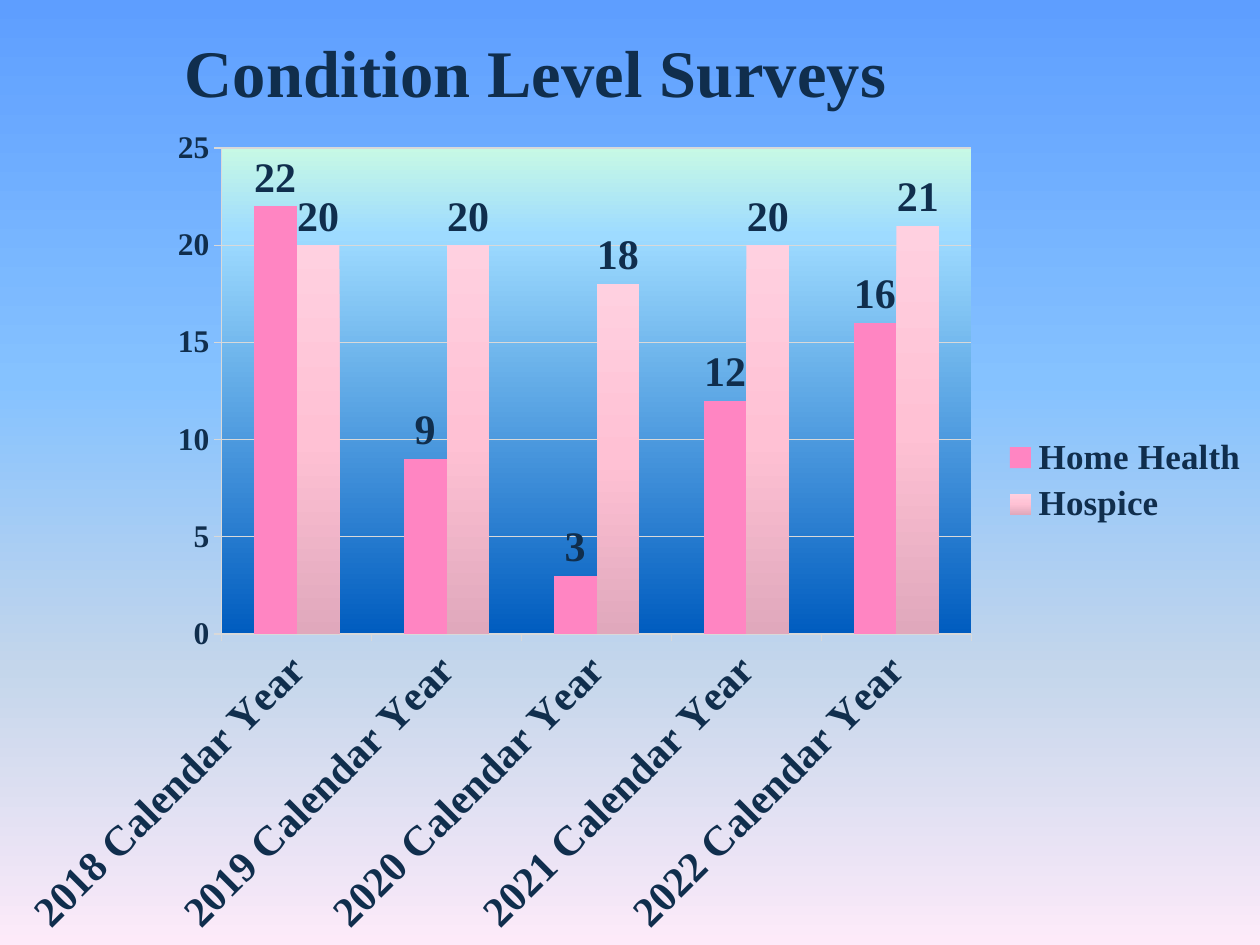
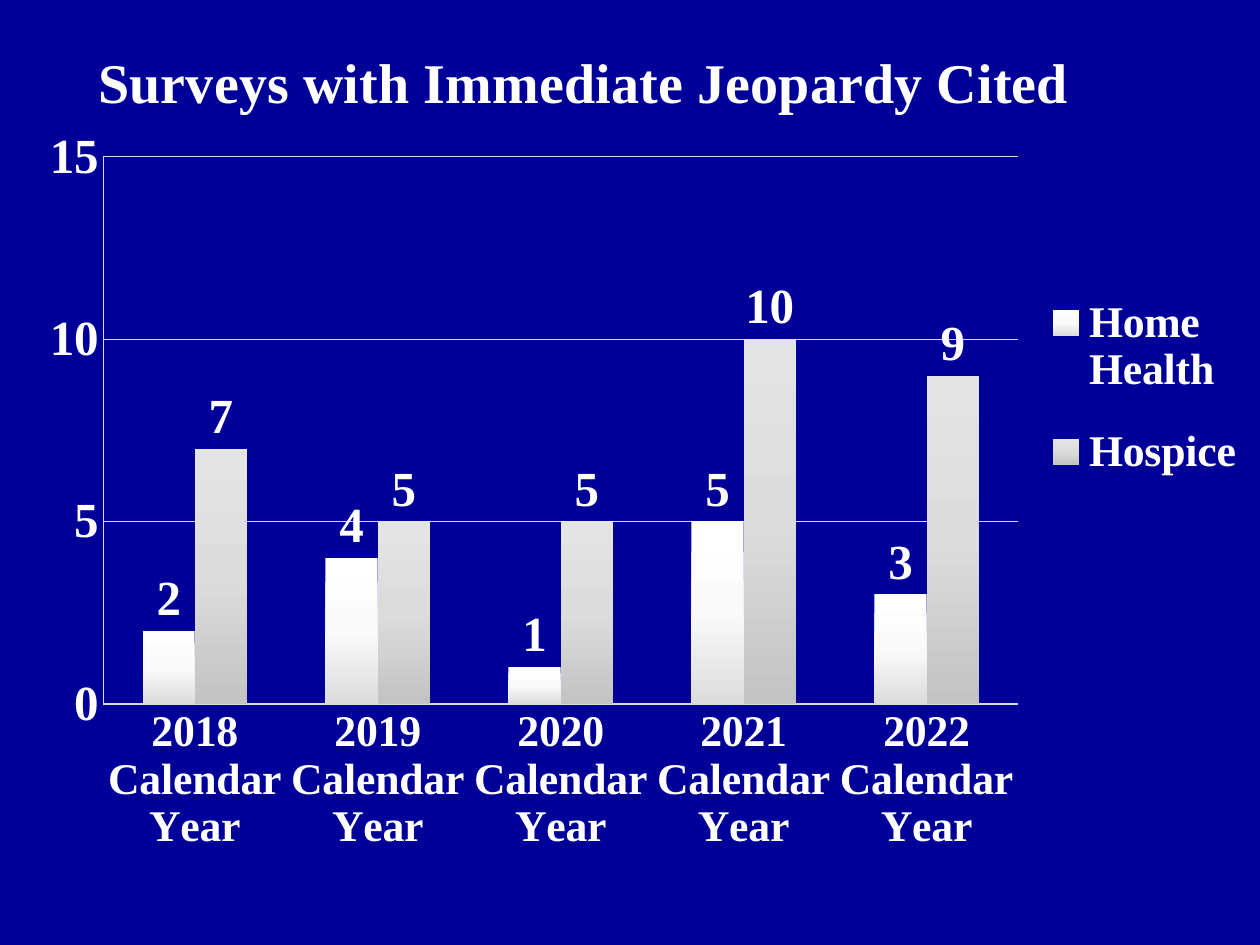
from lxml import etree
from pptx import Presentation
from pptx import util as u
from pptx.chart.data import CategoryChartData
from pptx.dml.color import RGBColor
from pptx.enum import chart as chart_enum
from pptx.oxml import parse_xml
from pptx.oxml.ns import nsdecls, qn

COLORS = {
    "background": "000099",
    "navy": "102E4D",
    "white": "FFFFFF",
    "grid": "D9D9D9",
    "pink": "FF85C2",
}
SKY = [(0, "5E9EFF"), (40, "85C2FF"), (70, "C4D6EB"), (100, "FFEBFA")]
SEA = [(0, "C7F9E5"), (18, "9EDBFF"), (100, "005CBF")]
PALE_PINK = [(0, "FFD0E0"), (50, "FFC1D4"), (100, "E0A8BC")]
WHITE_FADE = [(0, "FFFFFF"), (50, "FAFAFA"), (100, "DCDCDC")]
GRAY_FADE = [(0, "E4E4E4"), (50, "DCDCDC"), (100, "C3C3C3")]
FONT = "Times New Roman"
YEARS = [f"{year} Calendar Year" for year in range(2018, 2023)]


def rgb(name):
    return RGBColor.from_string(COLORS[name])


def gradient(stops):
    """Return a top-to-bottom gradient fill element."""
    marks = "".join(
        f'<a:gs pos="{percent * 1000}"><a:srgbClr val="{color}"/></a:gs>'
        for percent, color in stops)
    return parse_xml(
        f'<a:gradFill {nsdecls("a")} rotWithShape="1"><a:gsLst>{marks}</a:gsLst>'
        '<a:lin ang="5400000" scaled="0"/></a:gradFill>')


def area_properties(stops):
    """Return chart shape properties without a line, filled if stops are given."""
    properties = parse_xml(f'<c:spPr {nsdecls("c", "a")}><a:ln><a:noFill/></a:ln></c:spPr>')
    properties.insert(0, gradient(stops) if stops else
                      parse_xml(f'<a:noFill {nsdecls("a")}/>'))
    return properties


def set_layout(element, index, fractions, inner=False):
    """Place a chart part by fractions (x, y[, w, h]) of the chart's size."""
    for old in element.findall(qn("c:layout")):
        element.remove(old)
    layout = parse_xml(f'<c:layout {nsdecls("c")}><c:manualLayout/></c:layout>')
    settings = [("layoutTarget", "inner")] if inner else []
    settings += [("xMode", "edge"), ("yMode", "edge")]
    settings += list(zip("xywh", fractions))
    for tag, value in settings:
        etree.SubElement(layout[0], qn(f"c:{tag}")).set("val", str(value))
    element.insert(index, layout)


def style_font(font, size, color):
    font.name = FONT
    font.size = u.Pt(size)
    font.bold = True
    font.color.rgb = rgb(color)


def style_title(chart, title, size, color, place):
    frame = chart.chart_title.text_frame
    frame.text = title
    style_font(frame.paragraphs[0].runs[0].font, size, color)
    set_layout(chart.chart_title._element, 1, place)


def style_legend(chart, size, color, place):
    chart.has_legend = True
    legend = chart.legend
    legend.position = chart_enum.XL_LEGEND_POSITION.RIGHT
    legend.include_in_layout = False
    style_font(legend.font, size, color)
    set_layout(legend._element, 1, place)


def style_axes(chart, category_size, value_size, color, maximum, tick):
    for axis, size in ((chart.category_axis, category_size),
                       (chart.value_axis, value_size)):
        style_font(axis.tick_labels.font, size, color)
        axis.format.line.color.rgb = rgb("grid")
        axis.format.line.width = u.Pt(0.75)
        axis.major_tick_mark = tick
        axis.minor_tick_mark = chart_enum.XL_TICK_MARK.NONE
    value_axis = chart.value_axis
    value_axis.minimum_scale = 0
    value_axis.maximum_scale = maximum
    value_axis.major_unit = 5
    value_axis.has_major_gridlines = True
    value_axis.major_gridlines.format.line.color.rgb = rgb("grid")
    value_axis.major_gridlines.format.line.width = u.Pt(0.75)


def style_columns(chart, fills, label_size, color):
    plot = chart.plots[0]
    plot.gap_width = 150
    plot.overlap = 0
    plot.vary_by_categories = False
    plot.has_data_labels = True
    labels = plot.data_labels
    labels.show_value = True
    labels.position = chart_enum.XL_LABEL_POSITION.OUTSIDE_END
    style_font(labels.font, label_size, color)
    for series, fill in zip(plot.series, fills):
        series.invert_if_negative = False
        if isinstance(fill, str):
            series.format.fill.solid()
            series.format.fill.fore_color.rgb = rgb(fill)
        else:
            series._element.get_or_add_spPr().insert(0, gradient(fill))


def add_survey_chart(slide, box, home_health, hospice, plot_place,
                     area_fill=None, plot_fill=None):
    chart_data = CategoryChartData()
    chart_data.categories = YEARS
    chart_data.add_series("Home Health", home_health)
    chart_data.add_series("Hospice", hospice)
    chart = slide.shapes.add_chart(
        chart_enum.XL_CHART_TYPE.COLUMN_CLUSTERED,
        *(u.Inches(length) for length in box), chart_data).chart
    chart_space = chart._chartSpace
    chart_space.find(qn("c:chart")).addnext(area_properties(area_fill))
    plot_area = chart_space.chart.plotArea
    plot_area.append(area_properties(plot_fill))
    set_layout(plot_area, 0, plot_place, inner=True)
    return chart


def build_condition_level(slide):
    color = "navy"
    chart = add_survey_chart(
        slide, (0, 0, 10, 7.58), (22, 9, 3, 12, 16), (20, 20, 18, 20, 21),
        (0.176, 0.155, 0.595, 0.509), SKY, SEA)
    style_title(chart, "Condition Level Surveys", 38, color, (0.137, 0.019))
    style_axes(chart, 24, 18, color, 25, chart_enum.XL_TICK_MARK.OUTSIDE)
    style_columns(chart, ("pink", PALE_PINK), 24, color)
    style_legend(chart, 20, color, (0.793, 0.451, 0.2, 0.105))
    category_text = chart.category_axis._element.find(qn("c:txPr"))
    category_text.find(qn("a:bodyPr")).set("rot", "-2700000")


def build_immediate_jeopardy(slide):
    color = "white"
    chart = add_survey_chart(
        slide, (0, 0, 10, 7.5), (2, 4, 1, 5, 3), (7, 5, 5, 10, 9),
        (0.082, 0.166, 0.726, 0.579))
    style_title(chart, "Surveys with Immediate Jeopardy Cited", 32, color, (0.07, 0.039))
    style_axes(chart, 25, 28, color, 15, chart_enum.XL_TICK_MARK.NONE)
    style_columns(chart, (WHITE_FADE, GRAY_FADE), 28, color)
    style_legend(chart, 25, color, (0.826, 0.28, 0.165, 0.26))


def main():
    presentation = Presentation()
    presentation.slide_width = u.Inches(10)
    presentation.slide_height = u.Inches(7.5)
    background = presentation.slide_master.background.fill
    background.solid()
    background.fore_color.rgb = rgb("background")
    blank_layout = presentation.slide_layouts[6]
    for build in (build_condition_level, build_immediate_jeopardy):
        build(presentation.slides.add_slide(blank_layout))
    presentation.save("out.pptx")


if __name__ == "__main__":
    main()
